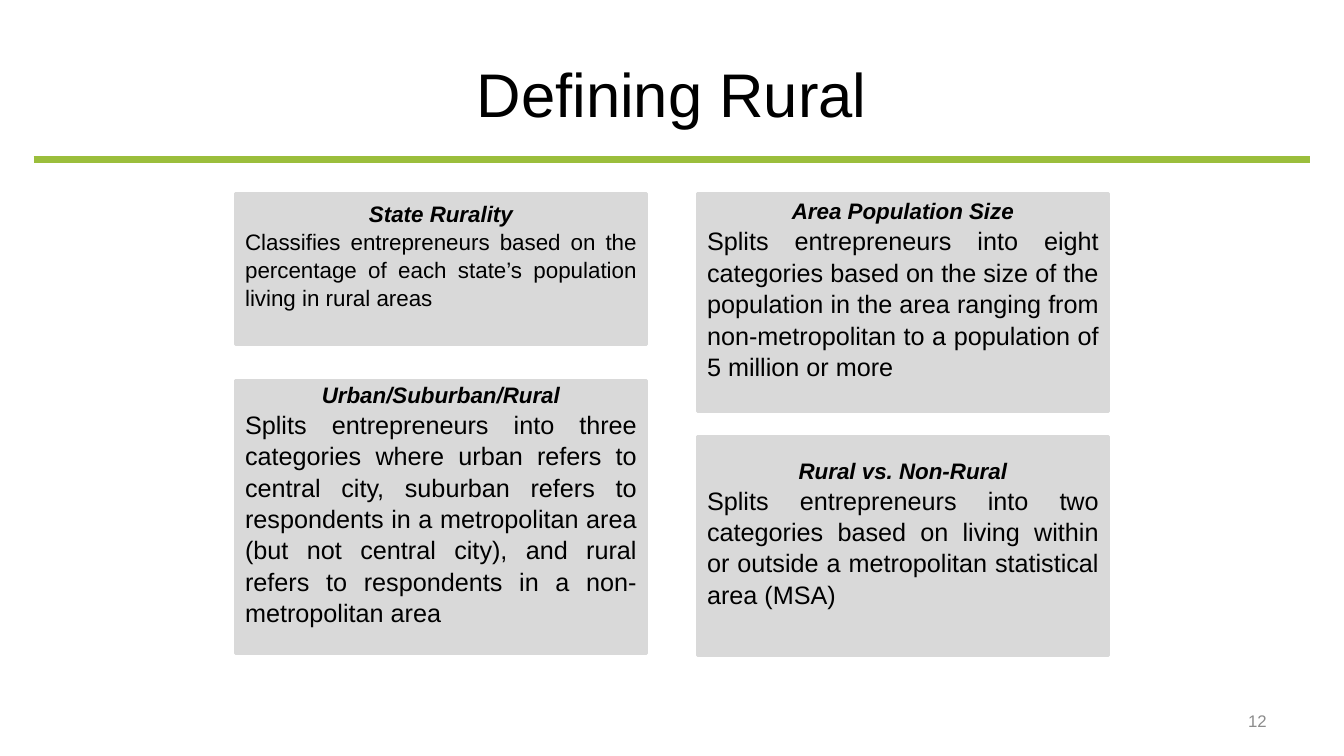
from lxml import etree
from pptx import Presentation
from pptx.dml.color import RGBColor
from pptx.enum.shapes import MSO_CONNECTOR as Connector, MSO_SHAPE as Shape
from pptx.enum.text import MSO_ANCHOR as Anchor, PP_ALIGN as Align
from pptx.oxml.ns import qn
from pptx.util import Pt

GREEN, GREY, BLACK, NUMBER_GREY = "9BBE3C", "D9D9D9", "000000", "8C8C8C"
COLUMN_LEFTS = (168, 498)
BOX_WIDTH = 294

# column, top, height, body size, heading, body
DEFINITIONS = [
    (0, 138, 108, 16, "State Rurality",
     "Classifies entrepreneurs based on the percentage of each state’s "
     "population living in rural areas"),
    (0, 272, 195, 18, "Urban/Suburban/Rural",
     "Splits entrepreneurs into three categories where urban refers to "
     "central city, suburban refers to respondents in a metropolitan area "
     "(but not central city), and rural refers to respondents in a "
     "non-metropolitan area"),
    (1, 138, 156, 18, "Area Population Size",
     "Splits entrepreneurs into eight categories based on the size of the "
     "population in the area ranging from non-metropolitan to a population "
     "of 5 million or more"),
    (1, 312, 156, 18, "Rural vs. Non-Rural",
     "Splits entrepreneurs into two categories based on living within or "
     "outside a metropolitan statistical area (MSA)"),
]


def color(hex_string):
    return RGBColor.from_string(hex_string)


def write(paragraph, text, size, align, hex_color=BLACK, emphasis=False):
    paragraph.alignment = align
    run = paragraph.add_run()
    run.text = text
    run.font.name = "Arial"
    run.font.size = Pt(size)
    run.font.bold = run.font.italic = emphasis
    run.font.color.rgb = color(hex_color)


def add_label(slide, left, top, width, height, text, size, align, hex_color=BLACK):
    box = slide.shapes.add_textbox(Pt(left), Pt(top), Pt(width), Pt(height))
    frame = box.text_frame
    frame.word_wrap = True
    frame.vertical_anchor = Anchor.MIDDLE
    write(frame.paragraphs[0], text, size, align, hex_color)


def add_rule(slide, left, right, y):
    rule = slide.shapes.add_connector(
        Connector.STRAIGHT, Pt(left), Pt(y), Pt(right), Pt(y))
    rule.line.color.rgb = color(GREEN)
    rule.line.width = Pt(4.5)
    etree.SubElement(rule._element.spPr, qn("a:effectLst"))


def add_definition(slide, column, top, height, body_size, heading, body):
    box = slide.shapes.add_shape(
        Shape.RECTANGLE, Pt(COLUMN_LEFTS[column]), Pt(top), Pt(BOX_WIDTH), Pt(height))
    box.shadow.inherit = False
    box.fill.solid()
    box.fill.fore_color.rgb = color(GREY)
    box.line.color.rgb = color(GREY)
    box.line.width = Pt(2)
    frame = box.text_frame
    frame.word_wrap = True
    frame.vertical_anchor = Anchor.MIDDLE
    frame.margin_bottom = Pt(22.7)  # lifts the text above the middle
    write(frame.paragraphs[0], heading, 16, Align.CENTER, emphasis=True)
    write(frame.add_paragraph(), body, body_size, Align.JUSTIFY)
    for paragraph in frame.paragraphs:
        paragraph.line_spacing = 1.04


def main():
    presentation = Presentation()
    presentation.slide_width = Pt(960)
    presentation.slide_height = Pt(540)
    slide = presentation.slides.add_slide(presentation.slide_layouts[6])
    add_rule(slide, 24, 936, 114)
    add_label(slide, 48, 21.6, 864, 90, "Defining Rural", 44, Align.CENTER)
    add_label(slide, 688, 500.4, 224, 28.8, "12", 12, Align.RIGHT, NUMBER_GREY)
    for definition in DEFINITIONS:
        add_definition(slide, *definition)
    presentation.save("out.pptx")


if __name__ == "__main__":
    main()
